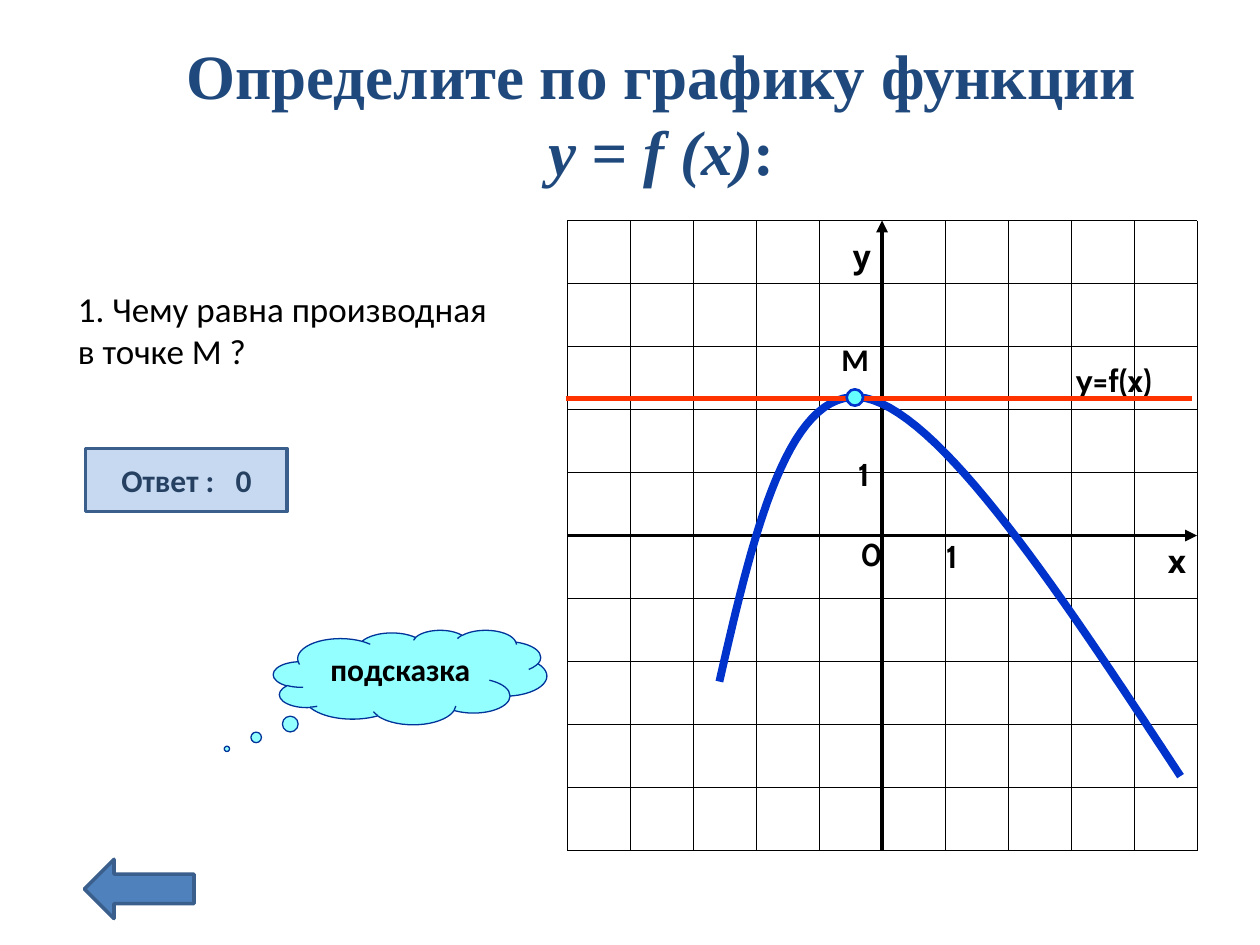
from lxml import etree
from pptx import Presentation
from pptx import util as u
from pptx.dml import color
from pptx.enum import shapes, text
from pptx.oxml import ns

COLORS = {
    "black": "000000", "title": "1F497D", "curve": "0033CC", "tangent": "FF3300",
    "aqua": "66FFFF", "cloud_line": "003399", "answer_fill": "C6D9F1",
    "answer_text": "254061", "button_line": "3A5F8C", "arrow_fill": "4F81BD",
}
TITLE = [("Определите по графику функции ", {}), ("у = f (x)", {"italic": True}), (":", {})]
QUESTION = ["1. Чему равна производная", "в точке М ?"]
ANSWER = [("Ответ :", 0), (" ", 8), ("0", 0)]
GRAPH_LABELS = [
    ("у", 6.67, 1.83, 0.35), ("х", 9.17, 4.25, 0.35), ("0", 6.73, 4.2, 0.36),
    ("1", 7.41, 4.21, 0.36), ("1", 6.71, 3.56, 0.36), ("y=f(x)", 8.44, 2.82, 1.02),
]
CURVE = [
    ((5.71, 5.41), (5.98, 4.23), (6.26, 3.04), (6.87, 3.16)),
    ((6.87, 3.16), (7.48, 3.29), (8.43, 4.73), (9.37, 6.16)),
]
CURVE_STEPS = 30
LEFT, TOP, SIDE, CELL = 4.5, 1.75, 5, 0.5
AXIS_X, AXIS_Y = LEFT + SIDE / 2, TOP + SIDE / 2


def rgb(tint):
    return color.RGBColor.from_string(COLORS[tint])


def set_line(shape, tint, width):
    shape.line.color.rgb = rgb(tint)
    shape.line.width = u.Pt(width)


def add_run(paragraph, content, tint="black", **values):
    run = paragraph.add_run()
    run.text = content
    run.font.color.rgb = rgb(tint)
    formats = {"name": "Calibri", "size": u.Pt(18), "bold": True, **values}
    for key, value in formats.items():
        setattr(run.font, key, value)
    return run


def add_line(parent, start, end, tint, width, arrow=False):
    points = [u.Inches(value) for value in (*start, *end)]
    line = parent.add_connector(shapes.MSO_CONNECTOR.STRAIGHT, *points)
    set_line(line, tint, width)
    if arrow:
        properties = line._element.spPr.find(ns.qn("a:ln"))
        etree.SubElement(properties, ns.qn("a:tailEnd"), type="triangle")
    etree.SubElement(line._element.spPr, ns.qn("a:effectLst"))


def add_text(parent, lines, box, wrap=False, **values):
    shape = parent.add_textbox(*map(u.Inches, box))
    frame = shape.text_frame
    frame.word_wrap = wrap
    frame.auto_size = text.MSO_AUTO_SIZE.SHAPE_TO_FIT_TEXT
    for index, content in enumerate(lines):
        paragraph = frame.add_paragraph() if index else frame.paragraphs[0]
        add_run(paragraph, content, **values)


def add_shape(slide, kind, box, fill, line, width):
    shape = slide.shapes.add_shape(kind, *map(u.Inches, box))
    shape.shadow.inherit = False
    shape.fill.solid()
    shape.fill.fore_color.rgb = rgb(fill)
    set_line(shape, line, width)
    return shape


def add_title(slide):
    title = slide.shapes.title
    box = {"left": 1.21, "top": 0.24, "width": 8.08, "height": 1.3}
    for key, value in box.items():
        setattr(title, key, u.Inches(value))
    frame = title.text_frame
    frame.word_wrap = True
    frame.auto_size = text.MSO_AUTO_SIZE.NONE
    frame.vertical_anchor = text.MSO_ANCHOR.MIDDLE
    paragraph = frame.paragraphs[0]
    paragraph.alignment = text.PP_ALIGN.CENTER
    for content, values in TITLE:
        add_run(paragraph, content, "title", **{"name": "Times New Roman", "size": u.Pt(36), **values})


def add_graph_grid(slide):
    grid = slide.shapes.add_group_shape().shapes
    offsets = [CELL * index for index in range(int(SIDE / CELL) + 1)]
    offsets.remove(SIDE / 2)
    for offset in offsets:
        x = LEFT + offset
        add_line(grid, (x, TOP), (x, TOP + SIDE), "black", 0.25)
    for offset in offsets:
        y = TOP + offset
        add_line(grid, (LEFT, y), (LEFT + SIDE, y), "black", 0.75)
    add_line(grid, (AXIS_X, TOP + SIDE), (AXIS_X, TOP), "black", 2.25, arrow=True)
    add_line(grid, (LEFT, AXIS_Y), (LEFT + SIDE, AXIS_Y), "black", 2.25, arrow=True)
    for content, left, top, width in GRAPH_LABELS:
        add_text(grid, [content], (left, top, width, 0.4), name="Cabin")


def bezier_point(controls, t):
    weights = ((1 - t) ** 3, 3 * t * (1 - t) ** 2, 3 * t ** 2 * (1 - t), t ** 3)
    return tuple(
        u.Inches(sum(weight * value for weight, value in zip(weights, values)))
        for values in zip(*controls)
    )


def add_curve(slide):
    points = [
        bezier_point(controls, step / CURVE_STEPS)
        for controls in CURVE for step in range(1, CURVE_STEPS + 1)
    ]
    start = bezier_point(CURVE[0], 0)
    builder = slide.shapes.build_freeform(*start)
    builder.add_line_segments(points, close=False)
    curve = builder.convert_to_shape()
    curve.shadow.inherit = False
    curve.fill.background()
    set_line(curve, "curve", 4.5)


def add_hint(slide):
    kind = shapes.MSO_SHAPE.CLOUD_CALLOUT
    cloud = add_shape(slide, kind, (2.17, 5, 2.17, 0.75), "aqua", "cloud_line", 0.75)
    cloud.adjustments[0], cloud.adjustments[1] = -0.67, 0.758
    fill = cloud._element.spPr.find(ns.qn("a:solidFill"))
    etree.SubElement(fill[0], ns.qn("a:alpha"), val="70000")
    cloud.text_frame.vertical_anchor = text.MSO_ANCHOR.TOP
    paragraph = cloud.text_frame.paragraphs[0]
    paragraph.alignment = text.PP_ALIGN.CENTER
    add_run(paragraph, "подсказка")


def add_answer(slide):
    kind = shapes.MSO_SHAPE.RECTANGLE
    answer = add_shape(slide, kind, (0.68, 3.56, 1.6, 0.5), "answer_fill", "button_line", 2)
    answer.text_frame.vertical_anchor = text.MSO_ANCHOR.MIDDLE
    paragraph = answer.text_frame.paragraphs[0]
    paragraph.alignment = text.PP_ALIGN.CENTER
    for content, spacing in ANSWER:
        run = add_run(paragraph, content, "answer_text")
        if spacing:
            run.font._element.set("spc", str(spacing * 100))


def main():
    presentation = Presentation()
    presentation.slide_width = u.Inches(10)
    presentation.slide_height = u.Inches(7.5)
    slide = presentation.slides.add_slide(presentation.slide_layouts[5])
    add_graph_grid(slide)
    add_text(slide.shapes, QUESTION, (0.52, 2.23, 3.54, 0.77), size=u.Pt(20), bold=False)
    add_curve(slide)
    add_line(slide.shapes, (4.49, 3.16), (9.46, 3.16), "tangent", 3)
    add_text(slide.shapes, ["М"], (6.58, 2.65, 0.41, 0.4), wrap=True)
    add_shape(slide, shapes.MSO_SHAPE.OVAL, (6.72, 3.09, 0.13, 0.13), "aqua", "curve", 1.5)
    add_title(slide)
    add_hint(slide)
    add_answer(slide)
    add_shape(slide, shapes.MSO_SHAPE.LEFT_ARROW, (0.67, 6.82, 0.87, 0.47), "arrow_fill", "button_line", 2)
    presentation.save("out.pptx")


if __name__ == "__main__":
    main()
